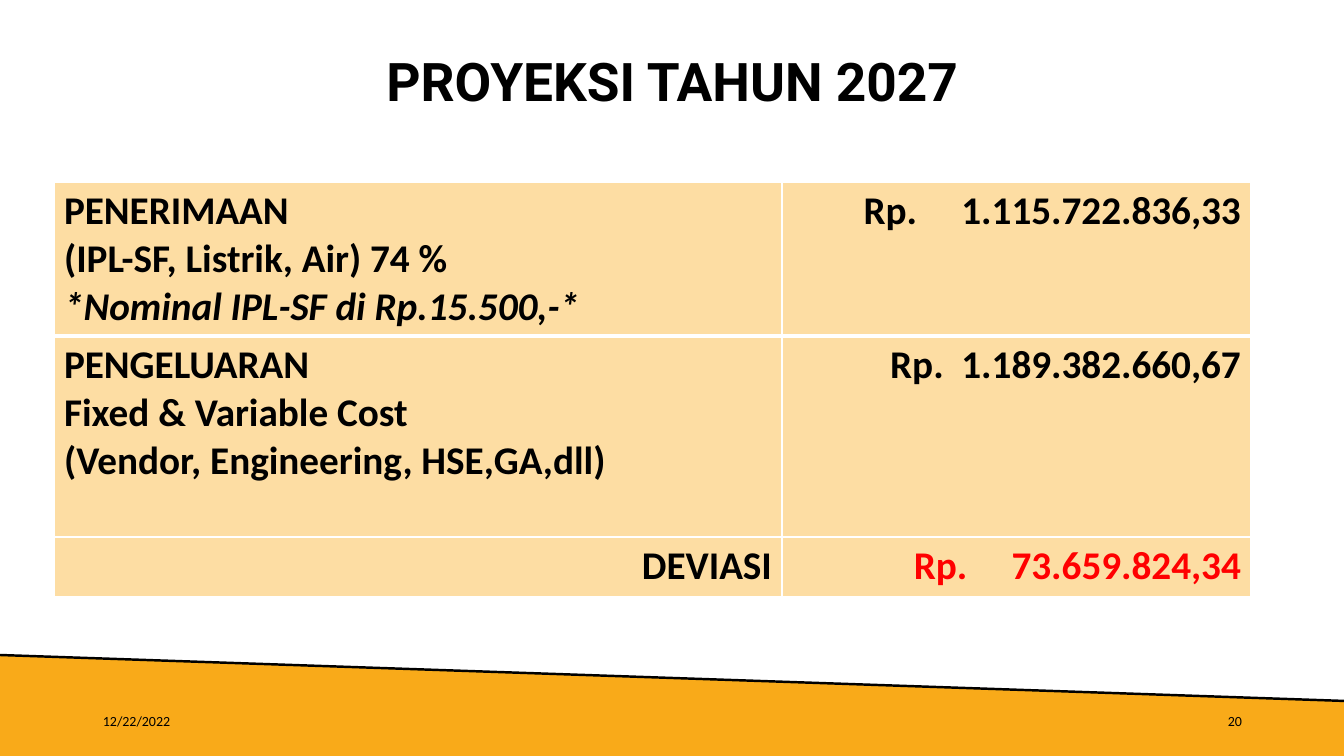
from pptx import Presentation
from pptx import util as u
from pptx.dml.color import RGBColor
from pptx.enum import shapes, text
from pptx.oxml.ns import qn
from lxml import etree

PX = 914400 / 100.8
HUES = {"ink": "000000", "gold": "F9AA19", "sand": "FDDDA3",
        "red": "FF0000", "white": "FFFFFF"}
LEFT, RIGHT, MID = text.PP_ALIGN.LEFT, text.PP_ALIGN.RIGHT, text.PP_ALIGN.CENTER
SPACE = 6.33  # width in points of one space at 28 pt


def px(n):
    return u.Emu(round(n * PX))


def hue(name):
    return RGBColor.from_string(HUES[name])


def write(frame, lines, size=28, font="Calibri", color="ink", bold=False,
          slant=(), align=LEFT, gap=0, lead=None):
    """Fill a text frame; slant lists italic lines, gap widens spaces by points."""
    frame.word_wrap = True
    for i, line in enumerate(lines):
        para = frame.paragraphs[0] if i == 0 else frame.add_paragraph()
        para.alignment = align
        if lead:
            para.line_spacing = lead
        for part in line.partition(" ") if gap else [line]:
            run = para.add_run()
            run.text = part
            run.font.size = u.Pt(size)
            run.font.name = font
            run.font.bold = bold
            run.font.italic = i in slant
            run.font.color.rgb = hue(color)
            if part == " ":
                run._r.get_or_add_rPr().set("spc", str(round(gap * 100)))


def label(slide, box, line, **style):
    frame = slide.shapes.add_textbox(*map(px, box)).text_frame
    frame.vertical_anchor = text.MSO_ANCHOR.MIDDLE
    write(frame, [line], **style)


def edge(cell, sides):
    """Draw white cell borders; sides maps a tag to a width in points."""
    props = cell._tc.get_or_add_tcPr()
    for i, (tag, width) in enumerate(sides.items()):
        line = etree.Element(qn(f"a:{tag}"), w=str(u.Pt(width)))
        fill = etree.SubElement(line, qn("a:solidFill"))
        etree.SubElement(fill, qn("a:srgbClr"), val=HUES["white"])
        props.insert(i, line)


def footer(slide, box, date, page):
    """Slanted gold band with its black rim, date and page number."""
    x, y, w, h = box
    drop = 46
    form = slide.shapes.build_freeform(x, y, scale=PX)
    form.add_line_segments([(x + w, y + drop), (x + w, y + h), (x, y + h - 3)])
    band = form.convert_to_shape()
    band.shadow.inherit = False
    band.fill.solid()
    band.fill.fore_color.rgb = hue("gold")
    band.line.fill.background()
    rim = slide.shapes.add_connector(shapes.MSO_CONNECTOR.STRAIGHT,
                                     px(x), px(y), px(x + w), px(y + drop))
    rim.line.color.rgb = hue("ink")
    rim.line.width = u.Pt(1.75)
    etree.SubElement(rim._element.spPr, qn("a:effectLst"))
    inset, wide = 94, 302
    label(slide, (x + inset, y + drop, wide, 40), date, size=10)
    label(slide, (x + w - inset - wide, y + drop, wide, 40), page,
          size=10, align=RIGHT)


def budget(slide, box, cols, rows):
    """Table of rows given as (height, item lines, item style, sum, sum style)."""
    grid = slide.shapes.add_table(len(rows), len(cols), *map(px, box)).table
    grid.first_row = grid.horz_banding = False
    for col, wide in zip(grid.columns, cols):
        col.width = px(wide)
    for r, (high, item, look, total, tone) in enumerate(rows):
        grid.rows[r].height = px(high)
        parts = [(item, look), ([total], dict(align=RIGHT, **tone))]
        for c, (lines, style) in enumerate(parts):
            cell = grid.cell(r, c)
            cell.fill.solid()
            cell.fill.fore_color.rgb = hue("sand")
            edge(cell, {"lnL": 1, "lnR": 1, "lnT": 3 if r == 1 else 1,
                        "lnB": 3 if r == 0 else 1})
            write(cell.text_frame, lines, bold=True, **style)


def main():
    deck = Presentation()
    deck.slide_width, deck.slide_height = px(1344), px(756)
    slide = deck.slides.add_slide(deck.slide_layouts[6])
    footer(slide, (-1, 655, 1347, 104), "12/22/2022", "20")
    label(slide, (93, 11, 1159, 146), "PROYEKSI TAHUN 2027", size=38,
          font="Roboto", bold=True, align=MID, lead=0.9)
    budget(slide, (54, 182, 1197, 415), (728, 469), [
        (154, ["PENERIMAAN", "(IPL-SF, Listrik, Air) 74 %",
               "*Nominal IPL-SF di Rp.15.500,-*"], {"slant": [2]},
         "Rp. 1.115.722.836,33", {"gap": 4 * SPACE}),
        (201, ["PENGELUARAN", "Fixed & Variable Cost",
               "(Vendor, Engineering, HSE,GA,dll)"], {},
         "Rp. 1.189.382.660,67", {"gap": SPACE}),
        (60, ["DEVIASI"], {"align": RIGHT},
         "Rp. 73.659.824,34", {"gap": 4 * SPACE, "color": "red"}),
    ])
    deck.save("out.pptx")


if __name__ == "__main__":
    main()
